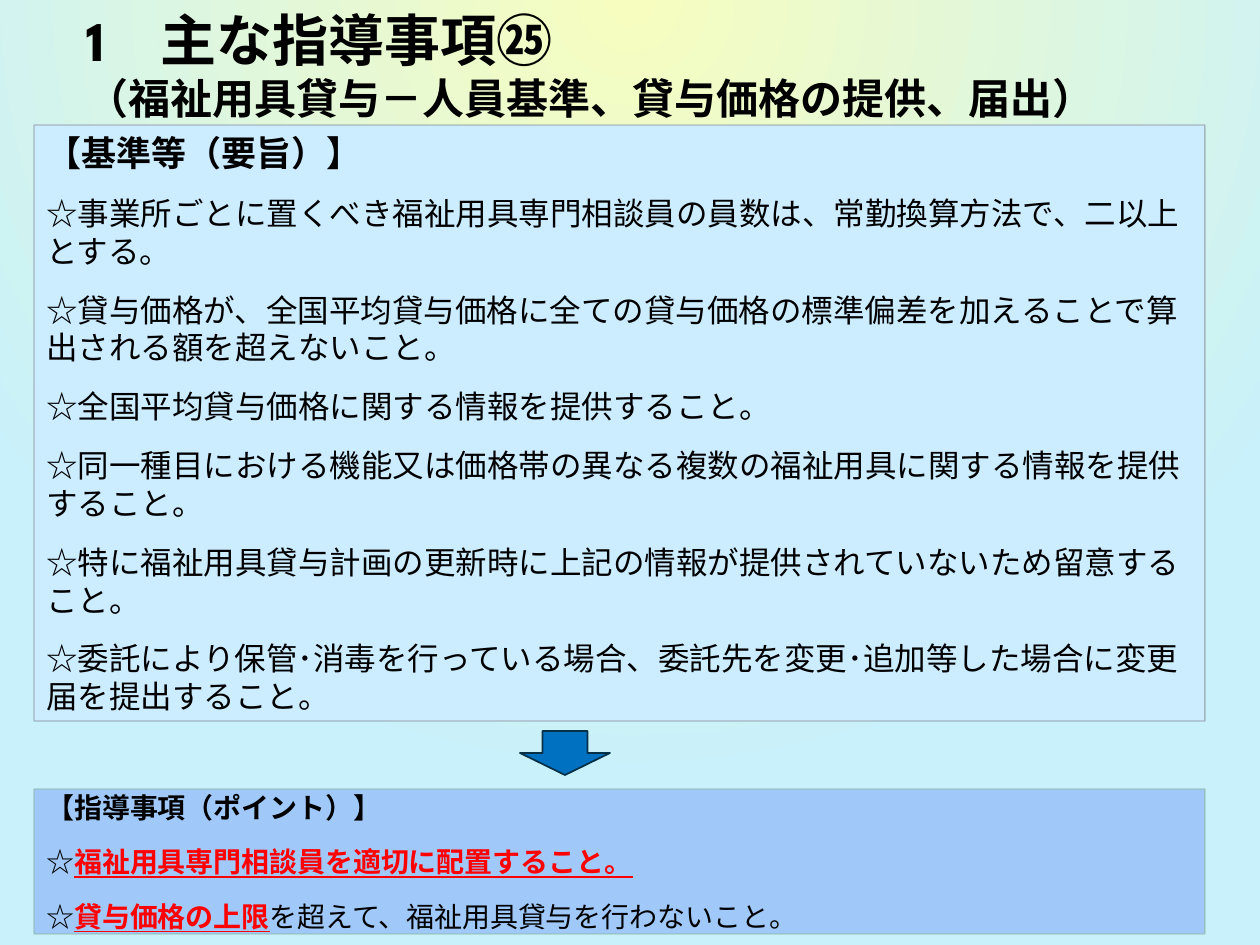
from lxml import etree
from pptx import Presentation
from pptx import util as u
from pptx.dml.color import RGBColor
from pptx.enum import shapes, text
from pptx.oxml.ns import qn

PX = 914400 / 126
FONT = "League Spartan"
BLACK = RGBColor(0, 0, 0)
RED = RGBColor(0xFF, 0, 0)
YELLOW = RGBColor(0xF7, 0xFD, 0xBF)
AQUA = RGBColor(0xC8, 0xF1, 0xFB)
PALE = RGBColor(0xCC, 0xEC, 0xFF)
SKY = RGBColor(0xA0, 0xC9, 0xFA)
GREY = RGBColor(0x89, 0x91, 0x9C)
SAGE = RGBColor(0x8A, 0xB7, 0xA1)
BLUE = RGBColor(0, 0x70, 0xC0)
NAVY = RGBColor(0x04, 0x31, 0x48)

RULES = [
    "☆事業所ごとに置くべき福祉用具専門相談員の員数は、常勤換算方法で、二以上とする。",
    "☆貸与価格が、全国平均貸与価格に全ての貸与価格の標準偏差を加えることで算出される額を超えないこと。",
    "☆全国平均貸与価格に関する情報を提供すること。",
    "☆同一種目における機能又は価格帯の異なる複数の福祉用具に関する情報を提供すること。",
    "☆特に福祉用具貸与計画の更新時に上記の情報が提供されていないため留意すること。",
    "☆委託により保管･消毒を行っている場合、委託先を変更･追加等した場合に変更届を提出すること。",
]
# Each point is a list of (words, stressed) pairs.
POINTS = [
    [("☆", False), ("福祉用具専門相談員を適切に配置すること。", True)],
    [("☆", False), ("貸与価格の上限", True),
     ("を超えて、福祉用具貸与を行わないこと。", False)],
]


def scale(box):
    return [round(n * PX) for n in box]


def write(para, words, size, bold=False, color=BLACK, line=False):
    run = para.add_run()
    run.text = words
    font = run.font
    font.name, font.size, font.bold = FONT, u.Pt(size), bold
    font.color.rgb = color
    font.underline = line


def setup(frame):
    frame.word_wrap = True
    frame.vertical_anchor = text.MSO_ANCHOR.MIDDLE
    return frame


def paint(slide):
    """Fill the background with a glow that spreads from the top edge."""
    fill = slide.background.fill
    fill.gradient()
    for stop, color in zip(fill.gradient_stops, (YELLOW, AQUA)):
        stop.color.rgb = color
    grad = next(slide.element.iter(qn("a:gradFill")))
    grad.remove(grad.find(qn("a:lin")))
    glow = etree.SubElement(grad, qn("a:path"), path="circle")
    etree.SubElement(glow, qn("a:fillToRect"), l="0", t="0", r="0", b="100000")


def shape(slide, kind, box, fill, edge, width):
    item = slide.shapes.add_shape(kind, *scale(box))
    item.shadow.inherit = False
    item.fill.solid()
    item.fill.fore_color.rgb = fill
    item.line.color.rgb = edge
    item.line.width = u.Pt(width)
    return item


def title(slide, box):
    frame = setup(slide.shapes.add_textbox(*scale(box)).text_frame)
    para = frame.paragraphs[0]
    write(para, "1\u3000主な指導事項㉕".replace("\u3000", "　"), 32, bold=True)
    para.add_line_break()
    write(para, "（福祉用具貸与－人員基準、貸与価格の提供、届出）", 24, bold=True)


def panel(slide, box, fill, edge, head, rows, size):
    """Draw a filled box with a bold heading and rows of (words, stressed)."""
    item = shape(slide, shapes.MSO_SHAPE.RECTANGLE, box, fill, edge, 0.75)
    tint = item.line.fill.fore_color
    tint.rgb = edge
    color = item.element.spPr.find(qn("a:ln")).find(".//" + qn("a:srgbClr"))
    etree.SubElement(color, qn("a:alpha"), val="60000")
    frame = setup(item.text_frame)
    for n in range(len(rows) + 1):
        para = frame.add_paragraph() if n else frame.paragraphs[0]
        para.alignment = text.PP_ALIGN.LEFT
        para.space_before = para.space_after = u.Pt(6)
        if n == 0:
            write(para, head[0], head[1], bold=True)
            continue
        for words, key in rows[n - 1]:
            write(para, words, size, bold=key, line=key,
                  color=RED if key else BLACK)


def main():
    deck = Presentation()
    deck.slide_width, deck.slide_height = u.Inches(10), u.Inches(7.5)
    slide = deck.slides.add_slide(deck.slide_layouts[6])
    paint(slide)
    title(slide, (74, 0, 1142, 129))
    panel(slide, (34, 125, 1171, 596), PALE, GREY,
          ("【基準等（要旨）】", 20), [[(rule, False)] for rule in RULES], 18)
    panel(slide, (34, 789, 1171, 145), SKY, SAGE,
          ("【指導事項（ポイント）】", 16), POINTS, 16)
    shape(slide, shapes.MSO_SHAPE.DOWN_ARROW, (520, 731, 90, 44),
          BLUE, NAVY, 1)
    deck.save("out.pptx")


if __name__ == "__main__":
    main()
